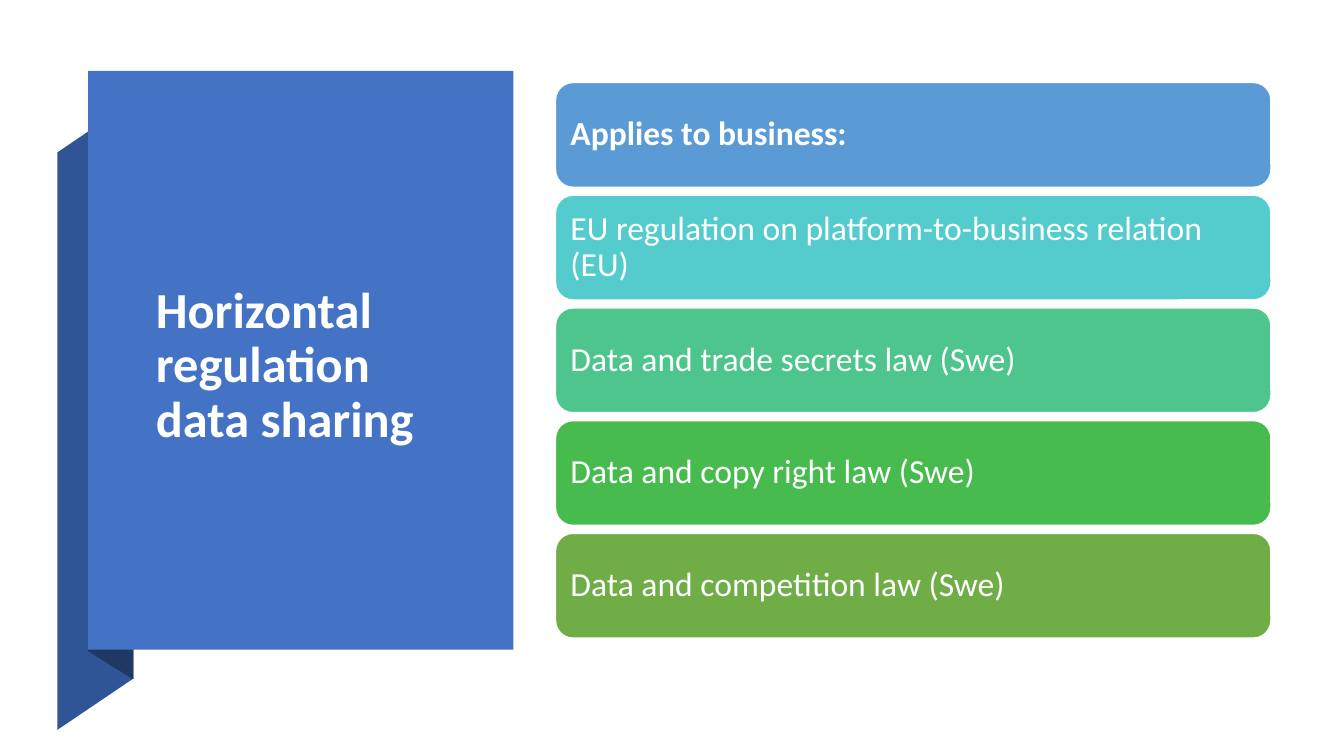
from pptx import Presentation
from pptx import util as u
from pptx.dml.color import RGBColor
from pptx.enum import shapes, text

WHITE = RGBColor(0xFF, 0xFF, 0xFF)
PANEL_BLUE = RGBColor(0x44, 0x72, 0xC4)
RIBBON_BLUE = RGBColor(0x2F, 0x55, 0x97)
FOLD_NAVY = RGBColor(0x20, 0x38, 0x64)
SKY = RGBColor(0x5B, 0x9B, 0xD5)
TURQUOISE = RGBColor(0x54, 0xCC, 0xCD)
MINT = RGBColor(0x4D, 0xC5, 0x8D)
GREEN = RGBColor(0x48, 0xBB, 0x4F)
OLIVE = RGBColor(0x70, 0xAD, 0x47)


def paint(shape, color):
    shape.shadow.inherit = False
    shape.fill.solid()
    shape.fill.fore_color.rgb = color
    shape.line.fill.background()


def write(shape, wording, size, bold):
    frame = shape.text_frame
    frame.text = wording
    frame.word_wrap = True
    frame.vertical_anchor = text.MSO_ANCHOR.MIDDLE
    paragraph = frame.paragraphs[0]
    paragraph.alignment = text.PP_ALIGN.LEFT
    paragraph.line_spacing = 0.9
    font = paragraph.runs[0].font
    font.name = "Calibri"
    font.size = u.Pt(size)
    font.bold = bold
    font.color.rgb = WHITE


deck = Presentation()
deck.slide_width = u.Cm(33.87)
deck.slide_height = u.Cm(19.05)
slide = deck.slides.add_slide(deck.slide_layouts[6])

# Ribbon and its fold behind the title panel
ribbon_parts = [
    (RIBBON_BLUE, [(1.45, 18.39), (3.36, 17.1), (3.36, 2.54), (1.45, 3.84)]),
    (FOLD_NAVY, [(2.22, 16.41), (3.36, 17.12), (3.36, 2.51), (2.22, 1.79)]),
]
for color, corners in ribbon_parts:
    points = [(u.Cm(x), u.Cm(y)) for x, y in corners]
    outline = slide.shapes.build_freeform(*points[0])
    outline.add_line_segments(points[1:], close=True)
    paint(outline.convert_to_shape(), color)

# Title panel
panel = slide.shapes.add_shape(
    shapes.MSO_SHAPE.RECTANGLE, u.Cm(2.22), u.Cm(1.79), u.Cm(10.72), u.Cm(14.58))
paint(panel, PANEL_BLUE)
title = slide.shapes.add_textbox(u.Cm(3.68), u.Cm(4.24), u.Cm(7.65), u.Cm(10))
write(title, "Horizontal regulation data sharing", 36, True)

# Stack of regulations, headed by the first bar
regulations = [
    ("Applies to business:", SKY),
    ("EU regulation on platform-to-business relation (EU)", TURQUOISE),
    ("Data and trade secrets law (Swe)", MINT),
    ("Data and copy right law (Swe)", GREEN),
    ("Data and competition law (Swe)", OLIVE),
]
BAR_TOP, BAR_HEIGHT, BAR_GAP = 2.08, 2.64, 0.2
for row, (wording, color) in enumerate(regulations):
    top = BAR_TOP + row * (BAR_HEIGHT + BAR_GAP)
    bar = slide.shapes.add_shape(
        shapes.MSO_SHAPE.ROUNDED_RECTANGLE,
        u.Cm(14), u.Cm(top), u.Cm(18.03), u.Cm(BAR_HEIGHT))
    paint(bar, color)
    bar.line.color.rgb = WHITE
    bar.line.width = u.Pt(1)
    write(bar, wording, 24, row == 0)

deck.save("out.pptx")
